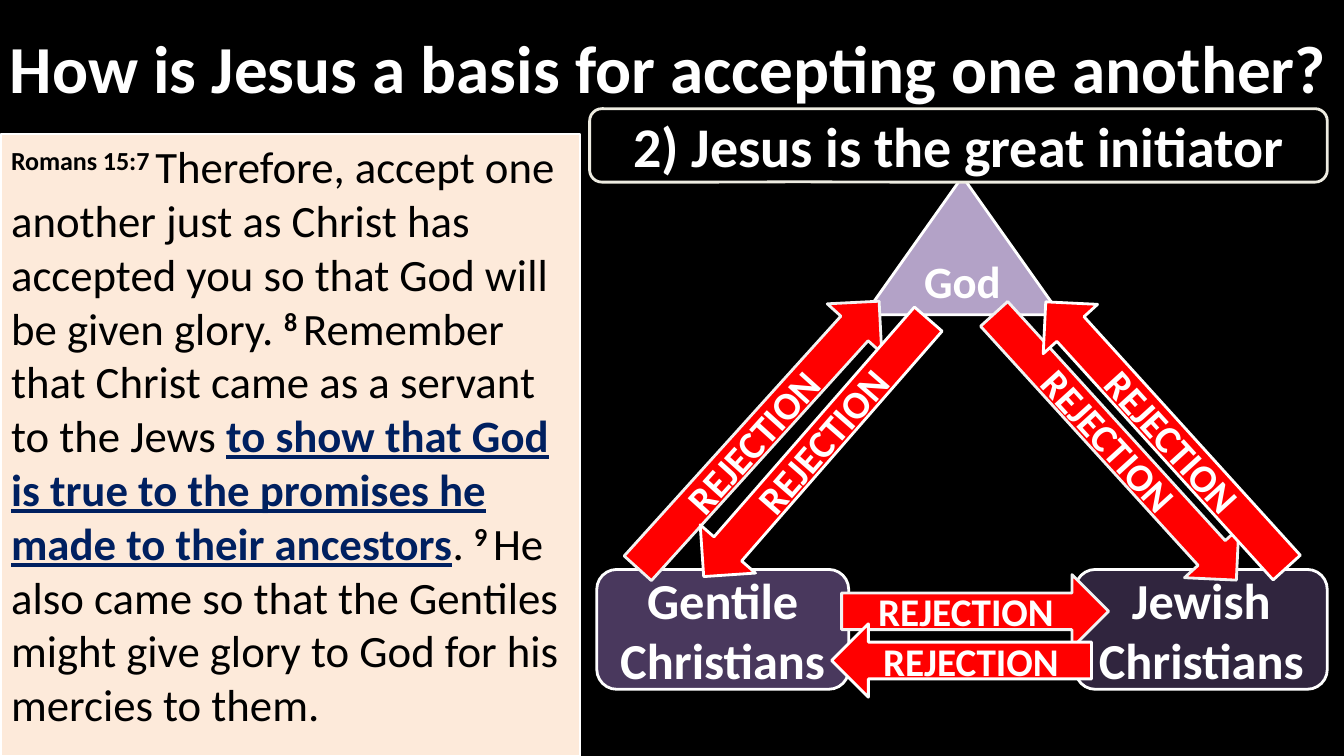
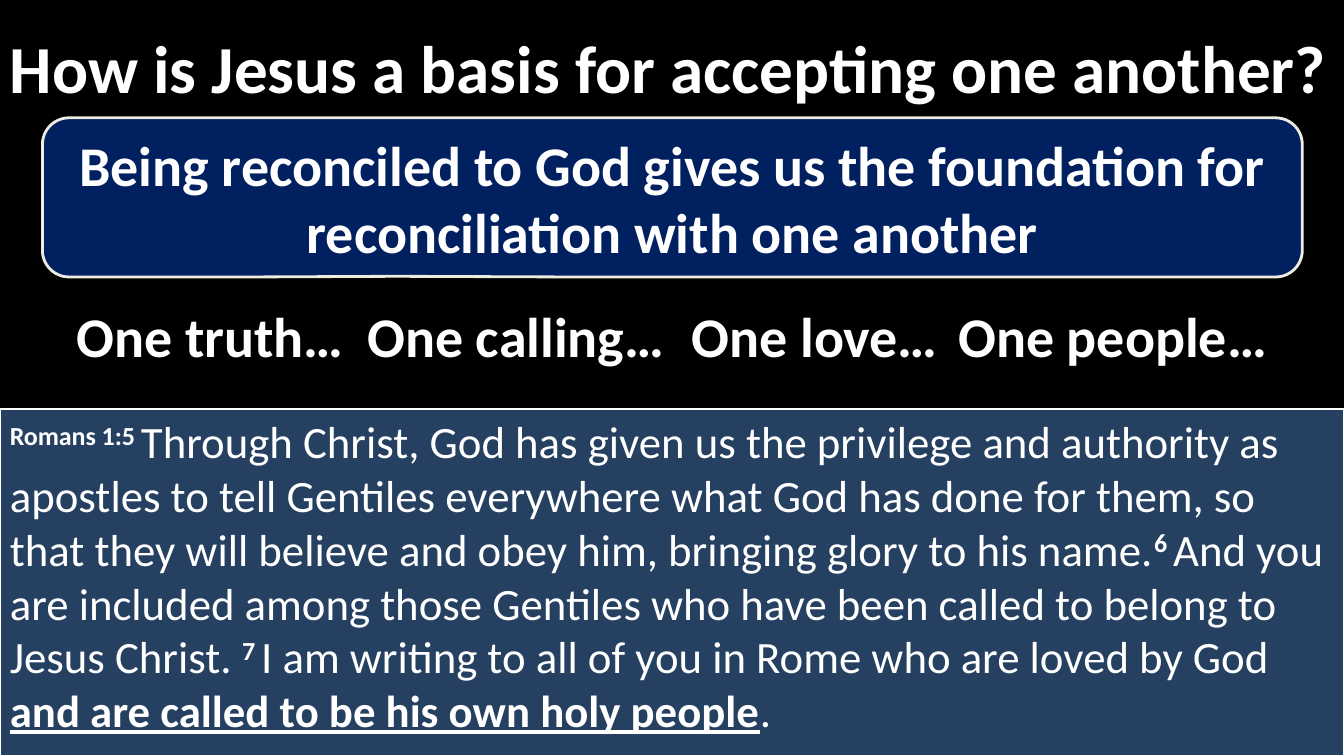
"""Build two slides on Jesus as a basis for accepting one another."""
from lxml import etree
from pptx import Presentation
from pptx import util as u
from pptx.dml.color import RGBColor
from pptx.enum import shapes, text
from pptx.oxml.ns import qn

FONT = "Calibri"
BLACK, WHITE, RED, NAVY = "000000", "FFFFFF", "FF0000", "002060"
OFF_WHITE, CREAM = "F2F2F2", "EEECE1"
WIDTH, HEIGHT = 33.87, 19.05
TAIL = (-0.219, 0.496, 0.167)
MSO = shapes.MSO_SHAPE
RIGHT, LEFT, CALLOUT = MSO.RIGHT_ARROW, MSO.LEFT_ARROW, MSO.ROUNDED_RECTANGULAR_CALLOUT


def paint(fill, colour, alpha=100):
    fill.solid()
    fill.fore_color.rgb = RGBColor.from_string(colour)
    if alpha < 100:
        node = fill._xPr.find(qn("a:solidFill"))[0]
        etree.SubElement(node, qn("a:alpha")).set("val", str(alpha * 1000))


def add_text_shape(s, kind, at, runs, size, fill=None, alpha=100, line=None, weight=2,
                   color=WHITE, key_color=WHITE, align="CENTER", anchor="MIDDLE", rotation=0):
    sp = s.shapes.add_shape(kind, *(u.Cm(v) for v in at))
    sp.shadow.inherit = False
    sp.rotation = rotation
    if kind == CALLOUT:
        for i, value in enumerate(TAIL):
            sp.adjustments[i] = value
    if fill:
        paint(sp.fill, fill, alpha)
    else:
        sp.fill.background()
    if line:
        paint(sp.line.fill, line)
        sp.line.width = u.Pt(weight)
    else:
        sp.line.fill.background()
    tf = sp.text_frame
    tf.word_wrap = True
    tf.vertical_anchor = text.MSO_ANCHOR[anchor]
    p = tf.paragraphs[0]
    p.alignment = text.PP_ALIGN[align]
    for words, style in [(runs, "bold")] if isinstance(runs, str) else runs:
        r = p.add_run()
        r.text = words
        r.font.name, r.font.size = FONT, u.Pt(size)
        r.font.bold = style != "plain"
        r.font.underline = style == "key"
        paint(r.font.fill, key_color if style == "key" else color)
        if style == "number":
            r._r.get_or_add_rPr().set("baseline", "30000")


prs = Presentation()
prs.slide_width, prs.slide_height = u.Cm(WIDTH), u.Cm(HEIGHT)
slides = [prs.slides.add_slide(prs.slide_layouts[6]) for _ in range(2)]
for s in slides:
    paint(s.background.fill, BLACK)
    add_text_shape(s, MSO.RECTANGLE, (0, 0, WIDTH, 3.35),
                   "How is Jesus a basis for accepting one another?", 48,
                   fill=BLACK, alpha=58, align="LEFT")

s = slides[0]
for left, fill, words in ((15.04, "604A7B", "Gentile Christians"),
                          (27.1, "403152", "Jewish Christians")):
    add_text_shape(s, MSO.ROUNDED_RECTANGLE, (left, 14.35, 6.35, 3.02), words, 36,
                   fill=fill, alpha=76, line=WHITE)

add_text_shape(s, MSO.ISOSCELES_TRIANGLE, (21.79, 4.45, 4.93, 3.48), "God", 32,
               fill="B3A2C7", line=WHITE)

for kind, left, top, width, rotation in ((RIGHT, 21.21, 14.48, 6.73, 0),
                                         (LEFT, 20.96, 15.72, 6.55, 0),
                                         (RIGHT, 14.58, 10.03, 9.07, 312.1),
                                         (LEFT, 16.26, 10.36, 8.61, 311.1),
                                         (RIGHT, 23.57, 10.34, 9.07, 47.7),
                                         (LEFT, 24.87, 10.03, 9.04, 47.8)):
    add_text_shape(s, kind, (left, top, width, 1.85), "REJECTION", 28, fill=RED,
                   line=OFF_WHITE if kind == RIGHT else WHITE, rotation=rotation)

add_text_shape(s, CALLOUT, (14.86, 2.74, 18.59, 1.85), "2) Jesus is the great initiator", 40,
               fill=BLACK, line=CREAM)

romans_15 = [
    ("Romans 15:7 ", "number"),
    ("Therefore, accept one another just as Christ has accepted you so that God will be "
     "given glory. ", "plain"),
    ("8 ", "number"),
    ("Remember that Christ came as a servant to the Jews ", "plain"),
    ("to show that God is true to the promises he made to their ancestors", "key"),
    (". ", "plain"),
    ("9 ", "number"),
    ("He also came so that the Gentiles might give glory to God for his mercies to them.",
     "plain"),
]
add_text_shape(s, MSO.RECTANGLE, (0.03, 3.38, 14.58, 15.67), romans_15, 32, fill="FDEADA",
               line=WHITE, weight=1.5, color=BLACK, key_color=NAVY, align="LEFT", anchor="TOP")

s = slides[1]
add_text_shape(s, CALLOUT, (1.07, 2.97, 31.75, 4.01),
               "Being reconciled to God gives us the foundation for reconciliation with one another",
               40, fill=NAVY, line=CREAM)

for left, width, words in ((0.64, 9.32, "One truth…"), (7.82, 10.36, "One calling…"),
                           (16.51, 8.05, "One love…"), (23.06, 9.96, "One people…")):
    add_text_shape(s, CALLOUT, (left, 7.49, width, 1.9), words, 40)

romans_1 = [
    ("Romans 1:5 ", "number"),
    ("Through Christ, God has given us the privilege and authority as apostles to tell "
     "Gentiles everywhere what God has done for them, so that they will believe and obey "
     "him, bringing glory to his name.", "plain"),
    ("6 ", "number"),
    ("And you are included among those Gentiles who have been called to belong to Jesus "
     "Christ. ", "plain"),
    ("7 ", "number"),
    ("I am writing to all of you in Rome who are loved by God ", "plain"),
    ("and are called to be his own holy people", "key"),
    (".", "plain"),
]
add_text_shape(s, MSO.RECTANGLE, (0, 10.31, WIDTH, 8.74), romans_1, 32, fill="254061",
               line=WHITE, weight=1.5, align="LEFT", anchor="TOP")

prs.save("out.pptx")
